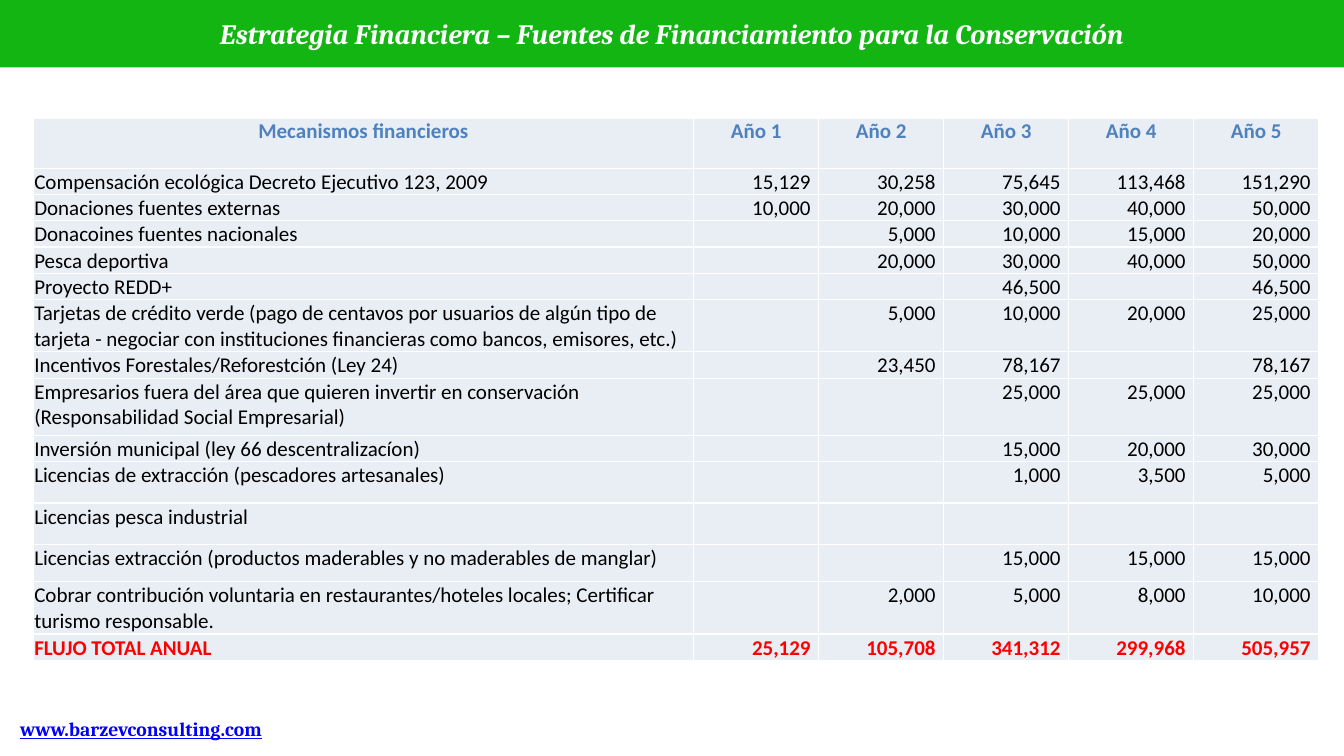
from lxml.etree import SubElement
from pptx import Presentation
from pptx.dml.color import RGBColor
from pptx.enum.shapes import MSO_SHAPE as Shape
from pptx.enum.text import MSO_ANCHOR as Anchor, PP_ALIGN as Align
from pptx.oxml.ns import qn
from pptx.util import Inches, Pt

TITLE = "Estrategia Financiera – Fuentes de Financiamiento para la Conservación"
WEBSITE = "www.barzevconsulting.com"
HEADER = ("Mecanismos financieros", "Año 1", "Año 2", "Año 3", "Año 4", "Año 5")
# Row height, mechanism, then one amount per year
MECHANISMS = [
    (0.26, "Compensación ecológica Decreto Ejecutivo 123, 2009", 15129, 30258, 75645, 113468, 151290),
    (0.26, "Donaciones fuentes externas", 10000, 20000, 30000, 40000, 50000),
    (0.26, "Donacoines fuentes nacionales", None, 5000, 10000, 15000, 20000),
    (0.26, "Pesca deportiva", None, 20000, 30000, 40000, 50000),
    (0.26, "Proyecto REDD+", None, None, 46500, None, 46500),
    (0.52, "Tarjetas de crédito verde (pago de centavos por usuarios de algún tipo de tarjeta - "
           "negociar con instituciones financieras como bancos, emisores, etc.)",
     None, 5000, 10000, 20000, 25000),
    (0.26, "Incentivos Forestales/Reforestción (Ley 24)", None, 23450, 78167, None, 78167),
    (0.57, "Empresarios fuera del área que quieren invertir en conservación "
           "(Responsabilidad Social Empresarial)", None, None, 25000, 25000, 25000),
    (0.26, "Inversión municipal (ley 66 descentralizacíon)", None, None, 15000, 20000, 30000),
    (0.41, "Licencias de extracción (pescadores artesanales)", None, None, 1000, 3500, 5000),
    (0.41, "Licencias pesca industrial", None, None, None, None, None),
    (0.37, "Licencias extracción (productos maderables y no maderables de manglar)",
     None, None, 15000, 15000, 15000),
    (0.52, "Cobrar contribución voluntaria en restaurantes/hoteles locales; "
           "Certificar turismo responsable.", None, 2000, 5000, 8000, 10000),
    (0.26, "FLUJO TOTAL ANUAL", 25129, 105708, 341312, 299968, 505957),
]
HEADER_HEIGHT, NAME_WIDTH, YEAR_WIDTH = 0.5, 6.55, 1.24

WHITE = RGBColor(0xFF, 0xFF, 0xFF)
BLACK = RGBColor(0, 0, 0)
GREEN = RGBColor(0x13, 0xB5, 0x13)
BLUE = RGBColor(0x4F, 0x81, 0xBD)
LINK_BLUE = RGBColor(0, 0, 0xFF)
RED = RGBColor(0xFF, 0, 0)
CELL_FILL = RGBColor(0xE9, 0xED, 0xF4)


def style_text(paragraph, name, size, color, bold, align):
    paragraph.alignment = align
    font = paragraph.font
    font.name, font.size, font.bold = name, Pt(size), bold
    font.color.rgb = color


def add_borders(cell):
    properties = cell._tc.get_or_add_tcPr()
    for side in ("a:lnL", "a:lnR", "a:lnT", "a:lnB"):
        line = SubElement(properties, qn(side), w=str(Pt(1)))
        SubElement(SubElement(line, qn("a:solidFill")), qn("a:srgbClr"), val=str(WHITE))


def fill_cell(cell, text, color, bold, align, right_margin):
    cell.margin_left = cell.margin_top = Inches(0.01)
    cell.margin_right, cell.margin_bottom = Inches(right_margin), 0
    add_borders(cell)
    cell.fill.solid()
    cell.fill.fore_color.rgb = CELL_FILL
    paragraph = cell.text_frame.paragraphs[0]
    if text:
        paragraph.text = text
        style_text(paragraph, "Calibri", 15, color, bold, align)
    else:
        # Keeps an empty cell from stretching its row
        SubElement(paragraph._p, qn("a:endParaRPr"), sz="1500")


presentation = Presentation()
presentation.slide_width, presentation.slide_height = Inches(13.33), Inches(7.5)
slide = presentation.slides.add_slide(presentation.slide_layouts[6])

# Website
website = slide.shapes.add_textbox(Inches(0.08), Inches(7.06), Inches(2.64), Inches(0.34))
website.text_frame.word_wrap = True
paragraph = website.text_frame.paragraphs[0]
paragraph.text = WEBSITE
style_text(paragraph, "Cambria", 14, LINK_BLUE, True, Align.CENTER)
paragraph.font.underline = True

# Funding table
heights = [HEADER_HEIGHT] + [row[0] for row in MECHANISMS]
widths = [NAME_WIDTH] + [YEAR_WIDTH] * (len(HEADER) - 1)
table = slide.shapes.add_table(len(heights), len(widths), Inches(0.33), Inches(1.17),
                               Inches(sum(widths)), Inches(sum(heights))).table
table.first_row = table.horz_banding = False
for column, width in zip(table.columns, widths):
    column.width = Inches(width)
for row, height in zip(table.rows, heights):
    row.height = Inches(height)

for column, label in enumerate(HEADER):
    fill_cell(table.cell(0, column), label, BLUE, True, Align.CENTER, 0.01)
for row, (_, name, *amounts) in enumerate(MECHANISMS, start=1):
    is_total = row == len(MECHANISMS)
    color = RED if is_total else BLACK
    fill_cell(table.cell(row, 0), name, color, is_total, Align.LEFT, 0.01)
    for column, amount in enumerate(amounts, start=1):
        text = f"{amount:,}" if amount is not None else ""
        fill_cell(table.cell(row, column), text, color, is_total, Align.RIGHT, 0.08)

# Title band
band = slide.shapes.add_shape(Shape.RECTANGLE, 0, 0, presentation.slide_width, Inches(0.67))
band.shadow.inherit = False
band.fill.solid()
band.fill.fore_color.rgb = GREEN
band.line.fill.background()
band.text_frame.word_wrap = True
band.text_frame.vertical_anchor = Anchor.MIDDLE
paragraph = band.text_frame.paragraphs[0]
paragraph.text = TITLE
style_text(paragraph, "Cambria", 20, WHITE, True, Align.CENTER)
paragraph.font.italic = True

presentation.save("out.pptx")
